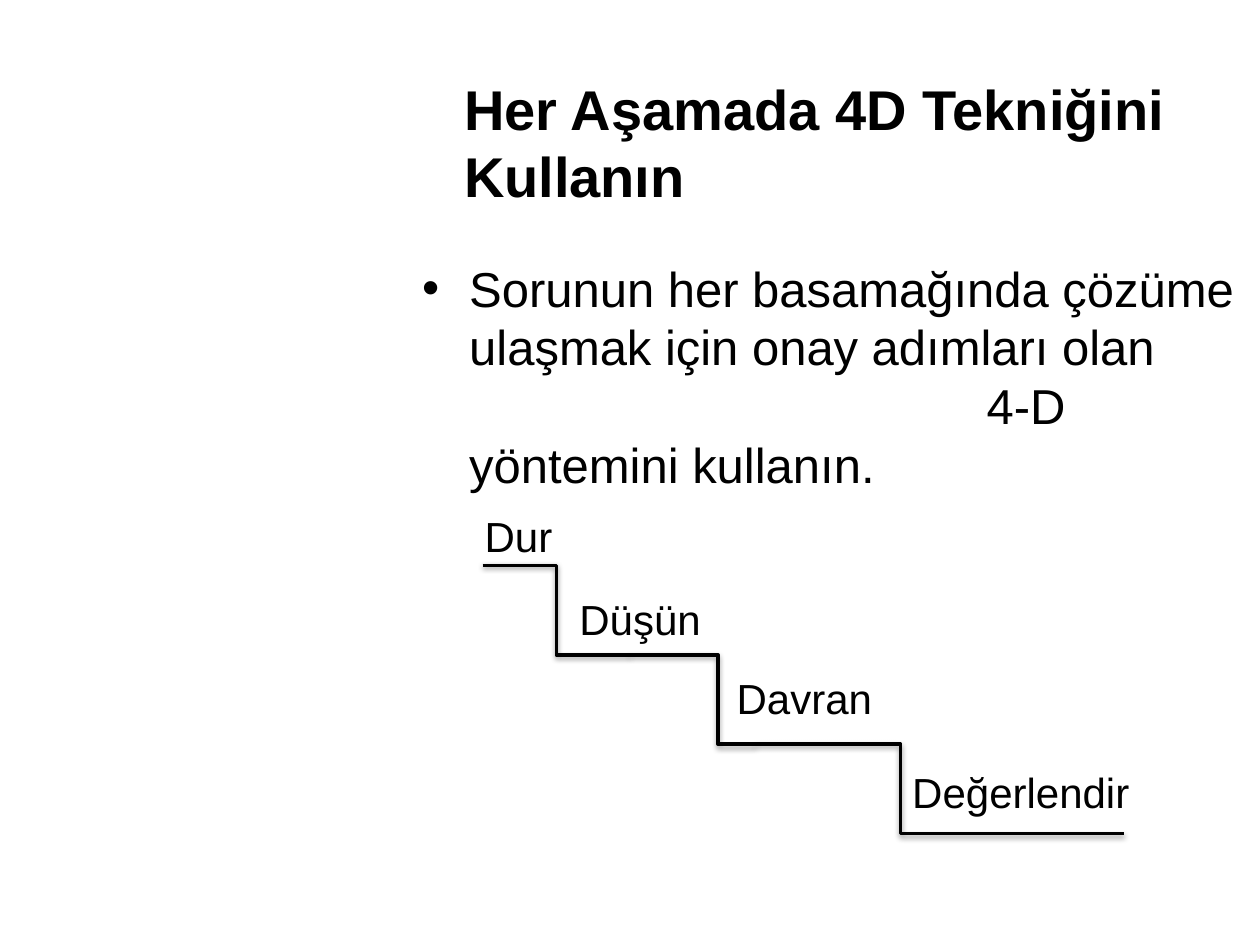
import lxml.etree
import pptx
import pptx.dml.color
import pptx.enum.shapes
import pptx.enum.text
import pptx.oxml.ns
import pptx.util

Cm = pptx.util.Cm
COLOURS = {"ink": "000000", "background": "FFFFFF"}
FONT = "Arial"
STEP_TOP = 11.4
STEP_RISE = 1.8
STEP_EDGES = [9.73, 12.7, 15.24, 22.66]
STEP_BENDS = [50000, 69800, 39300]
STEP_LABELS = [
    ("Dur", 9.52, 10.16, 2.54),
    ("Düşün", 11.43, 11.84, 2.97),
    ("Davran", 14.6, 13.44, 3.53),
    ("Değerlendir", 18.14, 15.32, 5.16),
]


class SlideBuilder:
    """Hold the slide and its style, and add each kind of element."""

    def __init__(self, presentation):
        self.slide = presentation.slides.add_slide(presentation.slide_layouts[5])
        fill = self.slide.background.fill
        fill.solid()
        fill.fore_color.rgb = self.colour("background")

    def colour(self, name):
        return pptx.dml.color.RGBColor.from_string(COLOURS[name])

    def child(self, parent, tag, **attributes):
        element = lxml.etree.SubElement(parent, pptx.oxml.ns.qn(tag))
        for name, value in attributes.items():
            element.set(name, str(value))
        return element

    def format_text(self, paragraph, size, bold=False):
        paragraph.alignment = pptx.enum.text.PP_ALIGN.LEFT
        for run in paragraph.runs:
            run.font.name = FONT
            run.font.size = pptx.util.Pt(size)
            run.font.bold = bold
            run.font.color.rgb = self.colour("ink")

    def title(self, text, left, top, width, height):
        shape = self.slide.shapes.title
        shape.left, shape.top = Cm(left), Cm(top)
        shape.width, shape.height = Cm(width), Cm(height)
        frame = shape.text_frame
        frame.text = text
        frame.word_wrap = True
        frame.auto_size = pptx.enum.text.MSO_AUTO_SIZE.NONE
        frame.vertical_anchor = pptx.enum.text.MSO_ANCHOR.MIDDLE
        self.format_text(frame.paragraphs[0], 32, bold=True)

    def text(self, text, left, top, width, height, size=24, wrap=False):
        shape = self.slide.shapes.add_textbox(Cm(left), Cm(top), Cm(width), Cm(height))
        shape.text_frame.word_wrap = wrap
        paragraph = shape.text_frame.paragraphs[0]
        paragraph.text = text
        self.format_text(paragraph, size)
        return paragraph

    def bullet(self, text, left, top, width, height, tab):
        paragraph = self.text(text, left, top, width, height, size=28, wrap=True)
        properties = paragraph._p.get_or_add_pPr()
        properties.set("marL", str(Cm(0.95)))
        properties.set("indent", str(-Cm(0.95)))
        self.child(properties, "a:buFont", typeface=FONT)
        self.child(properties, "a:buChar", char="•")
        tabs = self.child(properties, "a:tabLst")
        self.child(tabs, "a:tab", pos=Cm(tab), algn="l")

    def step(self, left, top, right, bottom, bend):
        connector = self.slide.shapes.add_connector(
            pptx.enum.shapes.MSO_CONNECTOR.ELBOW, Cm(left), Cm(top), Cm(right), Cm(bottom)
        )
        connector.line.color.rgb = self.colour("ink")
        connector.line.width = pptx.util.Pt(2)
        properties = connector._element.spPr
        guides = properties.find(".//" + pptx.oxml.ns.qn("a:avLst"))
        self.child(guides, "a:gd", name="adj1", fmla=f"val {bend}")
        effects = self.child(properties, "a:effectLst")
        shadow = self.child(
            effects, "a:outerShdw", blurRad=40000, dist=20000, dir=5400000, rotWithShape=0
        )
        shade = self.child(shadow, "a:srgbClr", val=COLOURS["ink"])
        self.child(shade, "a:alpha", val=38000)


def main():
    presentation = pptx.Presentation()
    presentation.slide_width, presentation.slide_height = Cm(25.4), Cm(19.05)
    builder = SlideBuilder(presentation)
    builder.title("Her Aşamada 4D Tekniğini Kullanın", 9.1, 0.64, 15.03, 4.44)
    builder.bullet(
        "Sorunun her basamağında çözüme ulaşmak için onay adımları olan\v"
        "\t4-D yöntemini kullanın.",
        8.26, 5.08, 17.14, 13.34, tab=11.38,
    )
    for index, bend in enumerate(STEP_BENDS):
        top = STEP_TOP + index * STEP_RISE
        builder.step(STEP_EDGES[index], top, STEP_EDGES[index + 1], top + STEP_RISE, bend)
    for label, left, top, width in STEP_LABELS:
        builder.text(label, left, top, width, 1.27)
    presentation.save("out.pptx")


if __name__ == "__main__":
    main()
